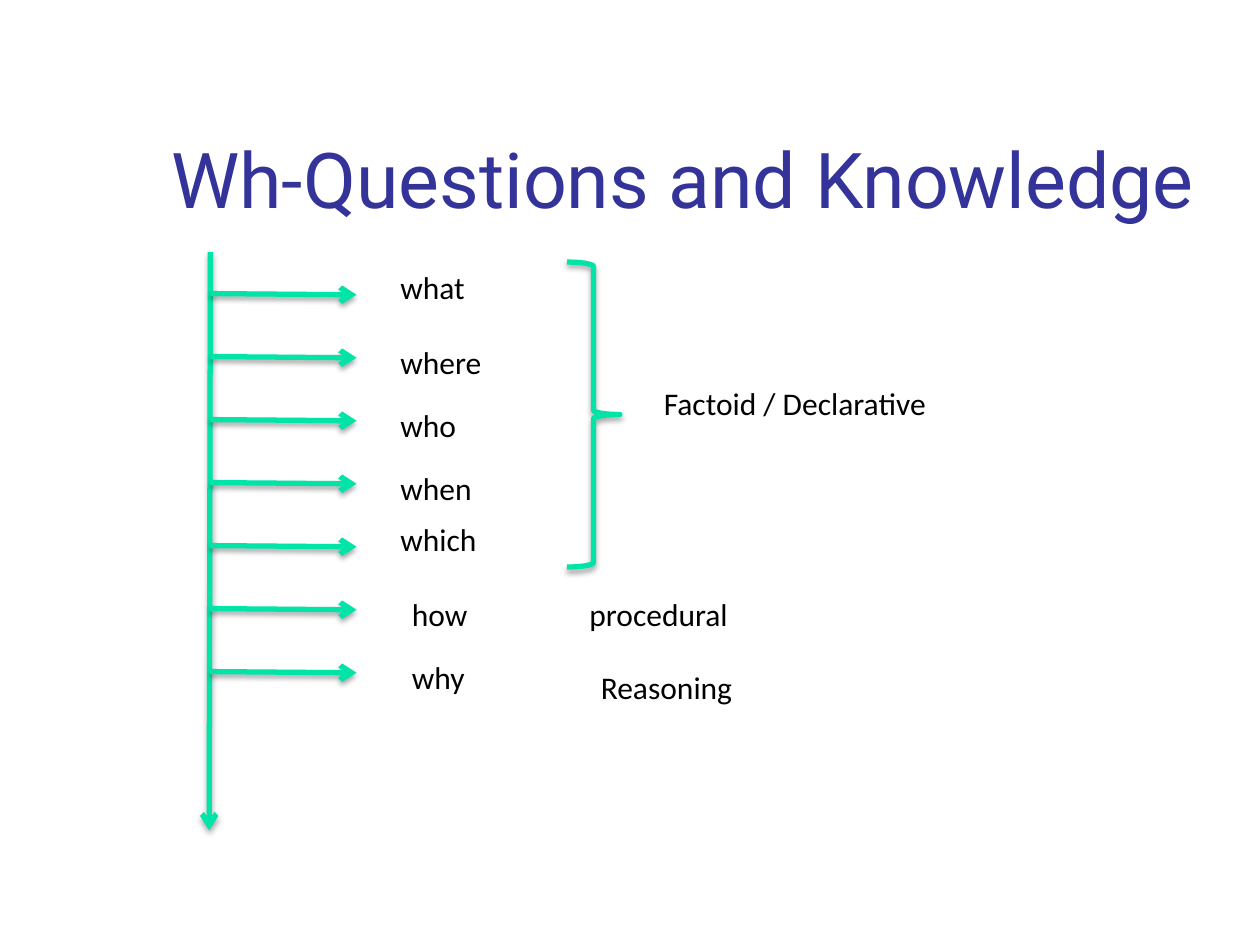
import pptx
import pptx.dml.color
import pptx.enum.shapes
import pptx.enum.text
import pptx.oxml
import pptx.oxml.ns
import pptx.util

Inches, Pt = pptx.util.Inches, pptx.util.Pt
qn = pptx.oxml.ns.qn

SHADOW = (
    f'<a:effectLst {pptx.oxml.ns.nsdecls("a")}>'
    '<a:outerShdw blurRad="39370" dist="22860" dir="5400000" rotWithShape="0">'
    '<a:srgbClr val="000000"><a:alpha val="35000"/></a:srgbClr>'
    '</a:outerShdw></a:effectLst>'
)


def color(hex_string):
    return pptx.dml.color.RGBColor.from_string(hex_string)


class Diagram:
    """Holds the style and the slide being drawn."""

    accent, ink, heading = "00E4A8", "000000", "333399"
    body_font, title_font = "Calibri", "Roboto"

    def __init__(self, slide):
        self.slide = slide

    def add_text(self, frame, text, size, font, hex_string):
        run = frame.paragraphs[0].add_run()
        run.text = text
        run.font.size = Pt(size)
        run.font.name = font
        run.font.color.rgb = color(hex_string)

    def title(self, text, left, top, width, height):
        title = self.slide.shapes.title
        title.left, title.top = Inches(left), Inches(top)
        title.width, title.height = Inches(width), Inches(height)
        frame = title.text_frame
        frame.vertical_anchor = pptx.enum.text.MSO_ANCHOR.BOTTOM
        frame.paragraphs[0].alignment = pptx.enum.text.PP_ALIGN.LEFT
        self.add_text(frame, text, 44, self.title_font, self.heading)

    def label(self, text, left, top, width, height=0.4):
        box = self.slide.shapes.add_textbox(
            Inches(left), Inches(top), Inches(width), Inches(height))
        frame = box.text_frame
        frame.word_wrap = True
        frame.auto_size = pptx.enum.text.MSO_AUTO_SIZE.SHAPE_TO_FIT_TEXT
        self.add_text(frame, text, 18, self.body_font, self.ink)

    def outline(self, shape):
        """Accent line with a soft shadow below."""
        shape.line.color.rgb = color(self.accent)
        shape.line.width = Pt(3)
        shape._element.spPr.append(pptx.oxml.parse_xml(SHADOW))

    def arrow(self, x1, y1, x2, y2):
        arrow = self.slide.shapes.add_connector(
            pptx.enum.shapes.MSO_CONNECTOR.STRAIGHT,
            Inches(x1), Inches(y1), Inches(x2), Inches(y2))
        self.outline(arrow)
        line = arrow._element.spPr.find(qn("a:ln"))
        line.append(pptx.oxml.parse_xml(
            f'<a:tailEnd {pptx.oxml.ns.nsdecls("a")} type="arrow"/>'))

    def brace(self, left, top, width, height):
        brace = self.slide.shapes.add_shape(
            pptx.enum.shapes.MSO_SHAPE.RIGHT_BRACE,
            Inches(left), Inches(top), Inches(width), Inches(height))
        brace.fill.background()
        self.outline(brace)


def main():
    deck = pptx.Presentation()
    deck.slide_width, deck.slide_height = Inches(10), Inches(7.5)
    title_only = deck.slide_layouts[5]
    diagram = Diagram(deck.slides.add_slide(title_only))

    diagram.title("Wh-Questions and Knowledge", 1.26, 0.23, 8.52, 1.6)

    # Trunk with one evenly spaced branch per question word
    questions = [
        ("what", 3.08, 2.08), ("where", 3.08, 2.67), ("who", 3.08, 3.17),
        ("when", 3.08, 3.67), ("which", 3.08, 4.08),
        ("how", 3.17, 4.67), ("why", 3.17, 5.17),
    ]
    diagram.arrow(1.67, 2, 1.66, 6.59)
    for row, (word, left, top) in enumerate(questions):
        branch_y = 2.33 + 0.5 * row
        diagram.arrow(1.67, branch_y, 2.83, branch_y + 0.01)
        diagram.label(word, left, top, 1.58)

    # Kinds of knowledge
    diagram.brace(4.5, 2.08, 0.42, 2.42)
    diagram.label("Factoid / Declarative", 5.17, 3, 3.92)
    diagram.label("procedural", 4.58, 4.67, 2.25, 0.42)
    diagram.label("Reasoning", 4.67, 5.25, 2.25)

    deck.save("out.pptx")


if __name__ == "__main__":
    main()
